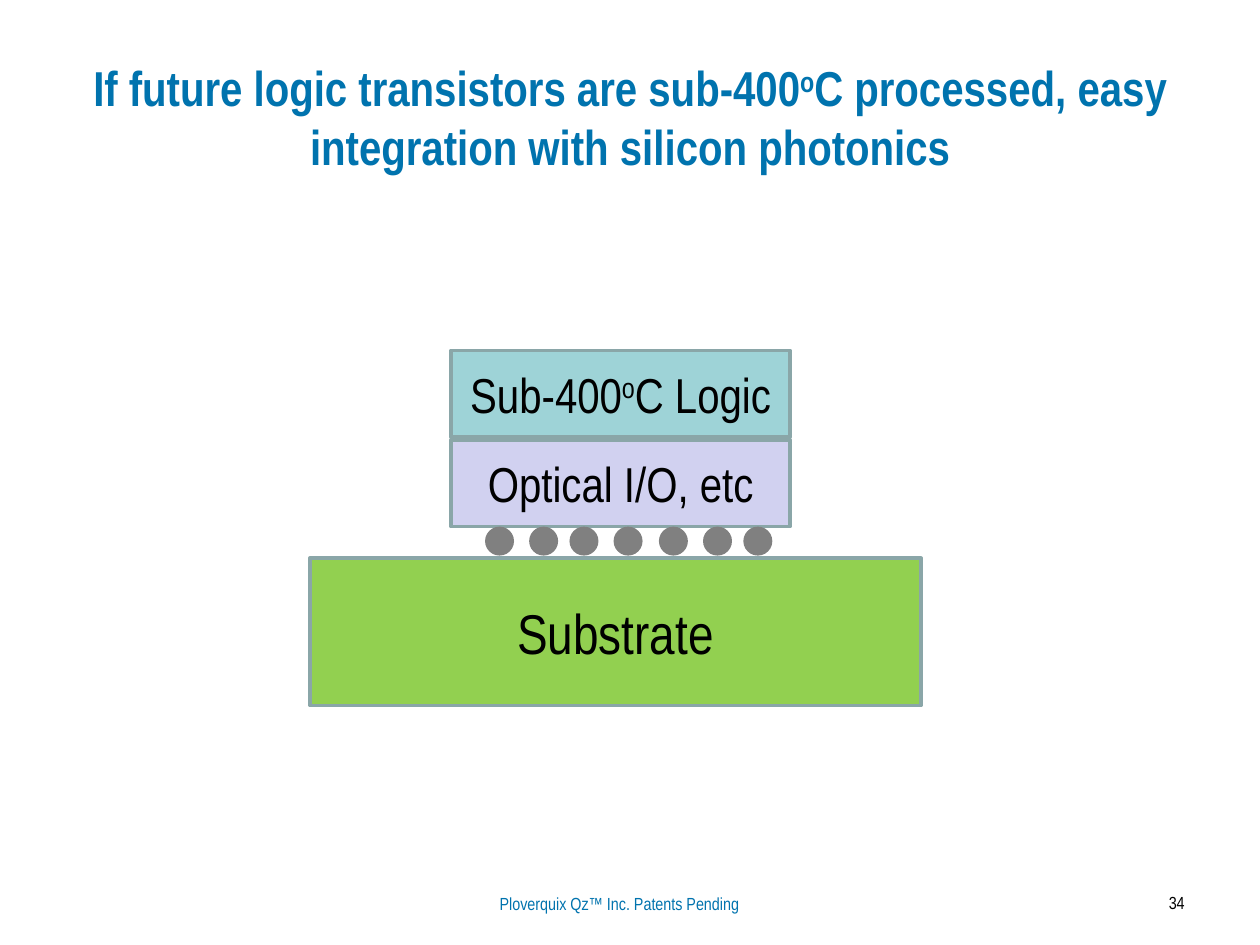
from pptx import Presentation
from pptx.dml.color import RGBColor
from pptx.enum.shapes import MSO_SHAPE
from pptx.enum.text import MSO_ANCHOR, PP_ALIGN
from pptx.util import Inches, Pt

RECTANGLE, OVAL = MSO_SHAPE.RECTANGLE, MSO_SHAPE.OVAL
TOP, MIDDLE = MSO_ANCHOR.TOP, MSO_ANCHOR.MIDDLE
CENTER, RIGHT = PP_ALIGN.CENTER, PP_ALIGN.RIGHT

BLUE = RGBColor(0x00, 0x73, 0xAE)
BLACK = RGBColor(0x00, 0x00, 0x00)
TEAL = RGBColor(0x9E, 0xD3, 0xD7)
LAVENDER = RGBColor(0xD1, 0xD1, 0xF0)
GREEN = RGBColor(0x92, 0xD0, 0x50)
GRAY = RGBColor(0x80, 0x80, 0x80)
OUTLINE = RGBColor(0x8A, 0xA6, 0xA8)
FONT = "Arial Narrow"


def write_text(frame, text, size=28, color=BLACK, bold=False,
               align=CENTER, anchor=MIDDLE):
    """Fill a text frame; parts between ^ marks are superscript."""
    frame.word_wrap = True
    frame.vertical_anchor = anchor
    paragraph = frame.paragraphs[0]
    paragraph.alignment = align
    for index, part in enumerate(text.split("^")):
        run = paragraph.add_run()
        run.text = part
        run.font.name = FONT
        run.font.size = Pt(size)
        run.font.bold = bold
        run.font.color.rgb = color
        if index % 2:
            run._r.get_or_add_rPr().set("baseline", "30000")


class StackSlide:
    """Holds the current slide and the shared line style."""

    def __init__(self, slide, outline=OUTLINE, line_width=2):
        self.slide = slide
        self.outline = outline
        self.line_width = line_width

    def label(self, text, left, top, width, height, **text_format):
        box = self.slide.shapes.add_textbox(
            Inches(left), Inches(top), Inches(width), Inches(height))
        write_text(box.text_frame, text, **text_format)

    def solid(self, kind, left, top, width, height, fill):
        shape = self.slide.shapes.add_shape(
            kind, Inches(left), Inches(top), Inches(width), Inches(height))
        shape.shadow.inherit = False
        shape.fill.solid()
        shape.fill.fore_color.rgb = fill
        return shape

    def layer(self, text, left, top, width, height, fill, **text_format):
        block = self.solid(RECTANGLE, left, top, width, height, fill)
        block.line.color.rgb = self.outline
        block.line.width = Pt(self.line_width)
        write_text(block.text_frame, text, **text_format)

    def solder_ball(self, left, top, diameter):
        ball = self.solid(OVAL, left, top, diameter, diameter, GRAY)
        ball.line.fill.background()


def main():
    deck = Presentation()
    deck.slide_width, deck.slide_height = Inches(10), Inches(7.5)
    stack = StackSlide(deck.slides.add_slide(deck.slide_layouts[6]))

    # Title
    stack.label("If future logic transistors are sub-400^o^C processed, easy "
                "integration with silicon photonics",
                0.5, 0.3, 9, 1.25, color=BLUE, bold=True)

    # Footer and page number
    stack.label("Ploverquix Qz™ Inc. Patents Pending", 3.33, 7.04, 3.17, 0.26,
                size=10, color=BLUE, anchor=TOP)
    stack.label("34", 8.39, 7.03, 1.11, 0.33,
                size=10, align=RIGHT, anchor=TOP)

    # Chip layers
    stack.layer("Sub-400^o^C Logic", 3.58, 2.78, 2.69, 0.69, TEAL)
    stack.layer("Optical I/O, etc", 3.58, 3.49, 2.69, 0.69, LAVENDER)

    # Solder balls, unevenly spaced
    for ball_left in (3.85, 4.2, 4.52, 4.87, 5.23, 5.58, 5.9):
        stack.solder_ball(ball_left, 4.18, 0.23)

    # Substrate
    stack.layer("Substrate", 2.46, 4.43, 4.85, 1.17, GREEN, size=32)

    deck.save("out.pptx")


if __name__ == "__main__":
    main()
